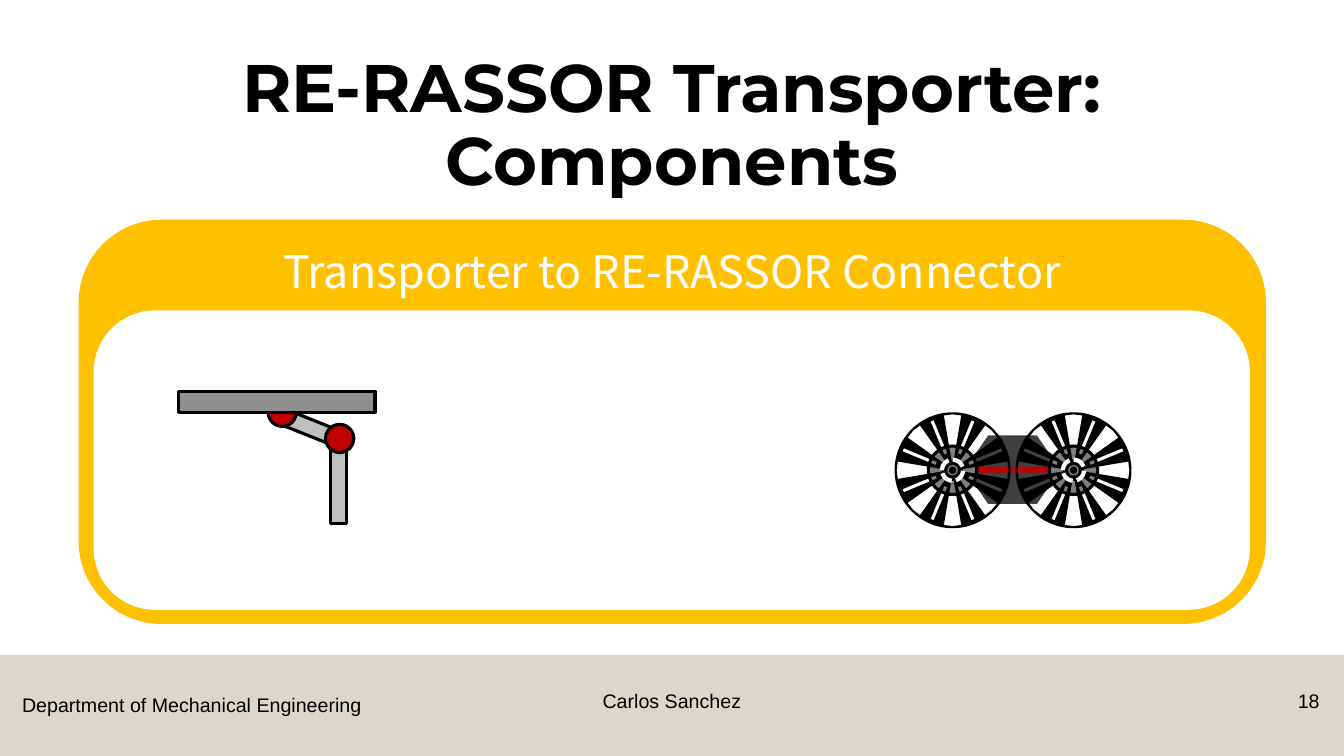
import math

import pptx
import pptx.dml.color
import pptx.enum.dml
import pptx.enum.shapes
import pptx.enum.text
import pptx.oxml
import pptx.oxml.ns
import pptx.util

RGBColor = pptx.dml.color.RGBColor
Shape = pptx.enum.shapes.MSO_SHAPE
Align = pptx.enum.text.PP_ALIGN
Anchor = pptx.enum.text.MSO_ANCHOR

BLACK = RGBColor(0x00, 0x00, 0x00)
WHITE = RGBColor(0xFF, 0xFF, 0xFF)
STONE = RGBColor(0xB7, 0xB0, 0x9C)
GOLD = RGBColor(0xFF, 0xC0, 0x00)
RED = RGBColor(0xC0, 0x00, 0x00)
ARM_GRAY = RGBColor(0xBF, 0xBF, 0xBF)
BEAM_GRAY = RGBColor(0x8F, 0x8F, 0x8F)
HUB_GRAY = RGBColor(0x7F, 0x7F, 0x7F)
CAP_GRAY = RGBColor(0x80, 0x80, 0x80)
BODY_GRAY = RGBColor(0x40, 0x40, 0x40)

# The slide is a grid of 160 by 90 square cells.
COLUMNS, ROWS = 160, 90
CELL = pptx.util.Inches(1) / 12

OUTLINE = 2.25
CARD_ROUNDING = 0.205
WHEEL_ROW = 55.98
WHEEL_COLUMNS = (113.4, 127.8)
SPOKES = 8


def cells(*counts):
    return [pptx.util.Emu(round(count * CELL)) for count in counts]


def paint(shape, fill, line=None, width=OUTLINE):
    shape.shadow.inherit = False
    shape.fill.solid()
    shape.fill.fore_color.rgb = fill
    if line is None:
        shape.line.fill.background()
    else:
        shape.line.color.rgb = line
        shape.line.width = pptx.util.Pt(width)


def add_block(page, kind, place, fill, line=None):
    """Add a preset shape; place is left, top, width, height in cells."""
    block = page.shapes.add_shape(kind, *cells(*place))
    paint(block, fill, line)
    return block


def add_disc(page, column, row, diameter, fill, line, width=OUTLINE):
    """Add a circle around the given centre."""
    left, top = column - diameter / 2, row - diameter / 2
    disc = add_block(page, Shape.OVAL, (left, top, diameter, diameter), fill)
    paint(disc, fill, line, width)
    return disc


def write(shape, words, size, font, color, align, bold=False):
    frame = shape.text_frame
    frame.vertical_anchor = Anchor.TOP
    para = frame.paragraphs[0]
    para.text = words
    para.alignment = align
    para.font.size = pptx.util.Pt(size)
    para.font.name = font
    para.font.color.rgb = color
    para.font.bold = bold
    return para


def add_footer(page):
    band = add_block(page, Shape.RECTANGLE, (0, 78, COLUMNS, ROWS - 78), STONE)
    color = band.fill._xPr.find(".//" + pptx.oxml.ns.qn("a:srgbClr"))
    color.append(pptx.oxml.parse_xml(
        f'<a:alpha {pptx.oxml.ns.nsdecls("a")} val="50000"/>'))
    for words, place, align in (
        ("Department of Mechanical Engineering", (1.44, 81.96, 43.08, 4.08), Align.LEFT),
        ("Carlos Sanchez", (53, 81.48, 54, 4.8), Align.CENTER),
        ("18", (149.04, 81.48, 9.24, 4.8), Align.RIGHT),
    ):
        box = page.shapes.add_textbox(*cells(*place))
        box.text_frame.word_wrap = align != Align.LEFT
        write(box, words, 14, "Arial", BLACK, align)


def add_title(page):
    title = page.shapes.title
    title.left, title.top, title.width, title.height = cells(11, 5.9, 138, 13.1)
    title.text_frame.auto_size = pptx.enum.text.MSO_AUTO_SIZE.NONE
    para = write(title, "RE-RASSOR Transporter: Components", 48, "Montserrat",
                 BLACK, Align.CENTER, bold=True)
    para.line_spacing = 0.9


def add_card(page):
    card = add_block(page, Shape.ROUNDED_RECTANGLE, (9.36, 26.16, 141.36, 48.12), GOLD)
    panel = add_block(page, Shape.ROUNDED_RECTANGLE, (11.16, 36.96, 137.64, 35.64), WHITE)
    for shape in (card, panel):
        shape.adjustments[0] = CARD_ROUNDING
    card.text_frame.margin_top = 0
    write(card, "Transporter to RE-RASSOR Connector", 32, "Noto Sans CJK JP",
          WHITE, Align.CENTER)


def add_connector_arm(page):
    link = add_block(page, Shape.RECTANGLE, (35.88, 46.68, 1.92, 8.4), ARM_GRAY, BLACK)
    link.rotation = 111.7
    add_block(page, Shape.RECTANGLE, (39.36, 52.08, 1.92, 10.2), ARM_GRAY, BLACK)
    for column, row in ((40.44, 52.2), (33.6, 49.08)):
        add_disc(page, column, row, 3.36, RED, BLACK)
    add_block(page, Shape.RECTANGLE, (21.24, 46.56, 23.4, 2.52), BEAM_GRAY, BLACK)


def wheel_outlines():
    """Return the rim, then its openings, as (radius, degrees, sideways) points."""
    outlines = [[(6.9, angle, 0) for angle in range(0, 360, 3)]]
    for spoke in range(SPOKES):
        angle = spoke * 360 / SPOKES
        outlines.append([(0.4, angle, 0), (6.6, angle + 9, 0),
                         (6.65, angle, 0), (6.6, angle - 9, 0)])
        middle = angle + 180 / SPOKES
        outlines.append([(2.1, middle, -0.2), (2.1, middle, 0.2),
                         (6.36, middle, 0.2), (6.36, middle, -0.2)])
    return outlines


def add_wheel(page, column, row):
    def locate(radius, degrees, sideways):
        turn = math.radians(degrees)
        return cells(column + radius * math.cos(turn) - sideways * math.sin(turn),
                     row + radius * math.sin(turn) + sideways * math.cos(turn))

    add_disc(page, column, row, 5.76, HUB_GRAY, BLACK)
    rim, *openings = [[locate(*point) for point in outline]
                      for outline in wheel_outlines()]
    builder = page.shapes.build_freeform(*rim[0])
    builder.add_line_segments(rim[1:])
    for opening in openings:
        builder.move_to(*opening[0])
        builder.add_line_segments(opening[1:])
    paint(builder.convert_to_shape(), BLACK)
    bearing = add_disc(page, column, row, 2.52, BLACK, WHITE, 3)
    bearing.line.dash_style = pptx.enum.dml.MSO_LINE.SQUARE_DOT
    add_disc(page, column, row, 1.08, BLACK, CAP_GRAY, 1)


def add_rover(page):
    body = add_block(page, Shape.HEXAGON, (114.84, 51.84, 11.4, 8.16), BODY_GRAY)
    body.adjustments[0] = 0.343
    add_block(page, Shape.RECTANGLE, (115.68, 55.56, 9.84, 0.72), RED)
    for column in WHEEL_COLUMNS:
        add_wheel(page, column, WHEEL_ROW)


def main():
    deck = pptx.Presentation()
    deck.slide_width, deck.slide_height = cells(COLUMNS, ROWS)
    page = deck.slides.add_slide(deck.slide_layouts.get_by_name("Title Only"))
    add_footer(page)
    add_title(page)
    add_card(page)
    add_connector_arm(page)
    add_rover(page)
    deck.save("out.pptx")


if __name__ == "__main__":
    main()
